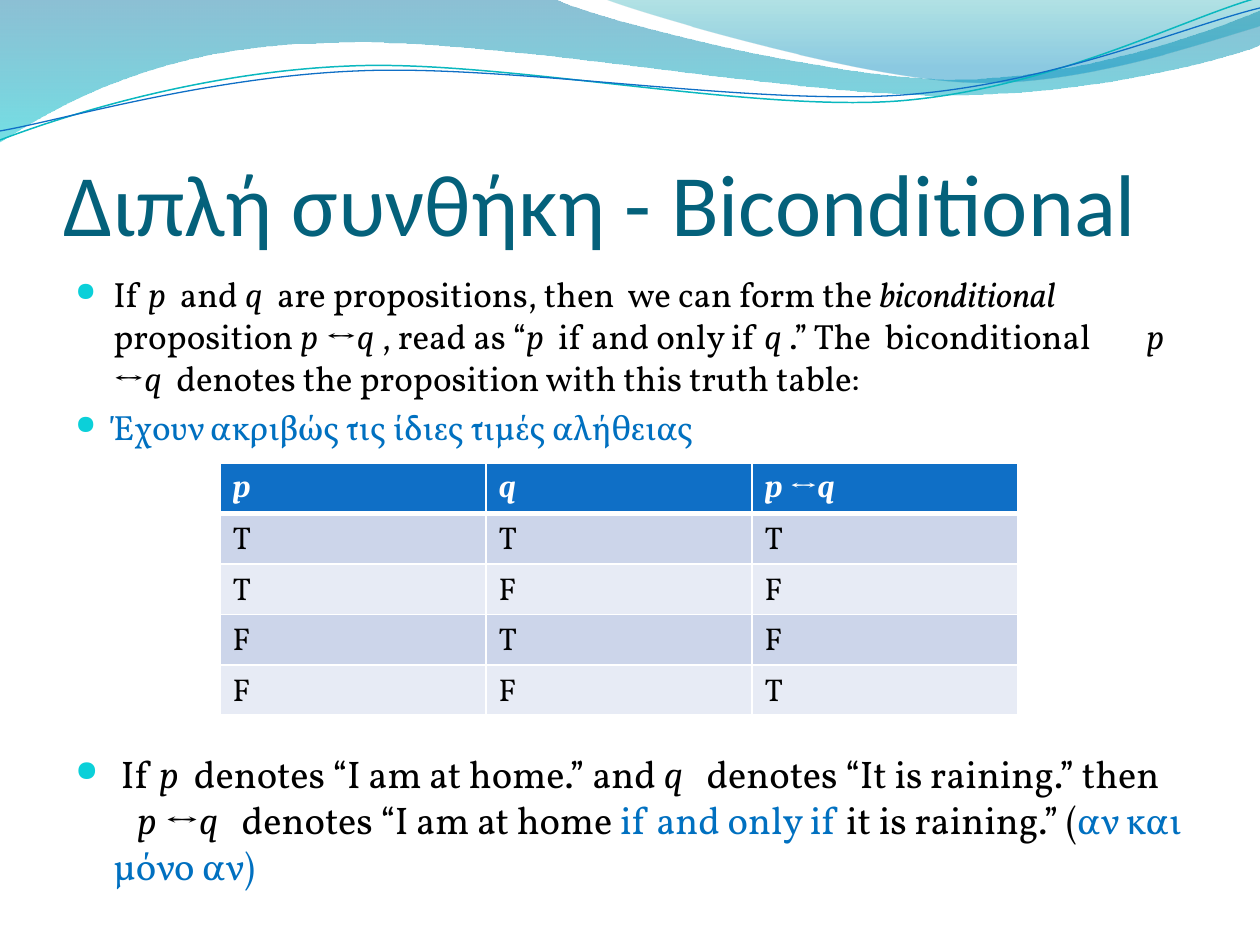
from lxml import etree
from pptx import Presentation
from pptx.dml.color import RGBColor
from pptx.enum.text import MSO_ANCHOR, MSO_AUTO_SIZE, PP_ALIGN
from pptx.oxml.ns import qn
from pptx.util import Pt

PX = 914400 / 126
LEFT, BOTTOM, NO_FIT = PP_ALIGN.LEFT, MSO_ANCHOR.BOTTOM, MSO_AUTO_SIZE.NONE
COLOURS = {
    "title": "04617B", "text": "000000", "accent": "0070C0", "bullet": "0BD0D9",
    "header": "0F6FC6", "white": "FFFFFF", "odd": "CCD5EA", "even": "E7EBF5",
    "wave_blue": "0074A1", "wave_cyan": "00C6CF", "crest_teal": "00A1A9",
    "crest_blue": "008BBF", "line_teal": "0AB8BF", "line_blue": "0F6FC6",
}
STYLES = {
    "plain": {},
    "key": {"colour": "accent"},
    "term": {"italic": True},
    "math": {"font": "Cambria", "italic": True},
    "arrow": {"font": "Cambria"},
}


def add_span(para, text, font="Vollkorn", size=20, colour="text", bold=False, italic=False):
    span = para.add_run()
    span.text = text
    span.font.name, span.font.size = font, Pt(size)
    span.font.bold, span.font.italic = bold, italic
    span.font.color.rgb = RGBColor.from_string(COLOURS[colour])


def add_curve(page, start, pieces, closed):
    """Draw line ends (2 numbers) and Bézier pieces (6 numbers), given in px."""
    ends = [piece[-2:] for piece in pieces]
    builder = page.shapes.build_freeform(*start, scale=PX)
    builder.add_line_segments(ends, close=closed)
    shape = builder.convert_to_shape()
    shape.shadow.inherit = False
    left = min(x for x, _ in [start, *ends])
    top = min(y for _, y in [start, *ends])
    for node, piece in zip(list(shape._element.iter(qn("a:lnTo"))), pieces):
        if len(piece) == 6:
            node.addprevious(bezier := etree.Element(qn("a:cubicBezTo")))
            for x, y in zip(piece[::2], piece[1::2]):
                etree.SubElement(bezier, qn("a:pt"), x=str(x - left), y=str(y - top))
            node.getparent().remove(node)
    return shape


deck = Presentation()
deck.slide_width, deck.slide_height = round(1260 * PX), round(945 * PX)
page = deck.slides.add_slide(deck.slide_layouts[5])

# Wave bands at the top: start, pieces, stops of (position, colour, opacity in %)
bands = [
    ((0, 0), [(554, -1), (600, 21, 837, 79, 955, 79), (1075, 79, 1207, 33, 1260, 11),
              (1261, 45), (1239, 55, 1096, 96, 940, 95), (784, 95, 481, 35, 324, 43),
              (163, 45, 58, 105, -1, 142)],
     [(0, "wave_blue", 45), (1, "wave_cyan", 55)]),
    ((604, -1), [(641, 14, 859, 78, 969, 82), (1079, 87, 1211, 40, 1260, 26), (1260, 0)],
     [(0, "crest_teal", 30), (0.8, "crest_blue", 45)]),
]
for start, pieces, stops in bands:
    band = add_curve(page, start, pieces, True)
    band.line.fill.background()
    band.fill.gradient()
    band.fill.gradient_angle = 270
    for stop, (position, colour, _) in zip(band.fill.gradient_stops, stops):
        stop.position = position
        stop.color.rgb = RGBColor.from_string(COLOURS[colour])
    colour_nodes = band._element.spPr.iter(qn("a:srgbClr"))
    for node, (_, _, opacity) in zip(colour_nodes, stops):
        etree.SubElement(node, qn("a:alpha"), val=str(opacity * 1000))

wave_lines = [
    ((0, 140), [(60, 117, 199, 72, 349, 66), (498, 59, 747, 112, 898, 101),
                (1050, 89, 1182, 19, 1257, -2)], "line_teal", 0.85),
    ((0, 131), [(59, 121, 207, 77, 357, 71), (508, 64, 752, 106, 903, 95),
                (1053, 84, 1186, 26, 1260, 8)], "line_blue", 0.75),
]
for start, pieces, colour, width in wave_lines:
    wave = add_curve(page, start, pieces, False)
    wave.fill.background()
    wave.line.color.rgb = RGBColor.from_string(COLOURS[colour])
    wave.line.width = Pt(width)

# Title
title = page.shapes.title
title.left, title.top, title.width, title.height = [round(n * PX) for n in (63, 97, 1134, 157)]
frame = title.text_frame
frame.auto_size, frame.vertical_anchor, frame.word_wrap = NO_FIT, BOTTOM, True
frame.margin_left = frame.margin_right = frame.margin_bottom = 0
frame.paragraphs[0].alignment = LEFT
add_span(frame.paragraphs[0], "Διπλή συνθήκη - Biconditional", font="Calibri", size=50, colour="title")

# Bulleted text: size, space before, tab stop, spans; the last leaves room for the table
equivalence = [("p ", "math"), ("↔", "arrow"), ("q", "math")]
bullets = [
    (20, 4, 1085, [
        ("If ", "plain"), ("p", "math"), ("  and ", "plain"), ("q", "math"),
        ("  are propositions, then  we can form the ", "plain"),
        ("biconditional ", "term"), ("proposition ", "plain"), *equivalence,
        (" , read as “", "plain"), ("p", "math"), ("  if and only if ", "plain"),
        ("q", "math"), (" .” The  biconditional\t", "plain"), *equivalence,
        ("  denotes the proposition with this truth table:", "plain")]),
    (20, 4, None, [("Έχουν ακριβώς τις ίδιες τιμές αλήθειας", "key")]),
    (22, 173, 62, [
        (" If ", "plain"), ("p", "math"), ("  denotes “I am at home.” and ", "plain"),
        ("q", "math"), ("   denotes “It is raining.” then", "plain"), ("\n", "break"),
        ("\t", "plain"), *equivalence, ("   denotes “I am at home ", "plain"),
        ("if and only if ", "key"), ("it is raining.” (", "plain"),
        ("αν και μόνο αν)", "key")]),
]
box = page.shapes.add_textbox(*[round(n * PX) for n in (63, 266, 1134, 605)])
frame = box.text_frame
frame.word_wrap = True
for index, (size, space, tab_stop, spans) in enumerate(bullets):
    para = frame.add_paragraph() if index else frame.paragraphs[0]
    para.space_before = Pt(space)
    for text, style in spans:
        if style == "break":
            para.add_line_break()
        else:
            add_span(para, text, size=size, **STYLES[style])
    props = para._p.get_or_add_pPr()
    props.set("marL", str(round(38 * PX)))
    props.set("indent", str(round(-38 * PX)))
    bullet_colour = etree.SubElement(props, qn("a:buClr"))
    etree.SubElement(bullet_colour, qn("a:srgbClr"), val=COLOURS["bullet"])
    etree.SubElement(props, qn("a:buSzPct"), val="75000")
    etree.SubElement(props, qn("a:buChar"), char="●")
    if tab_stop:
        tabs = etree.SubElement(props, qn("a:tabLst"))
        etree.SubElement(tabs, qn("a:tab"), pos=str(round(tab_stop * PX)), algn="l")

# Truth table
headings = [[("p", "math")], [("q", "math")], equivalence]
rows = [headings] + [[[(value, "plain")] for value in values] for values in ("TTT", "TFF", "FTF", "FFT")]
table_frame = page.shapes.add_table(5, 3, *[round(n * PX) for n in (220, 463, 798, 210)])
for row, cells in enumerate(rows):
    fill = "header" if row == 0 else "odd" if row % 2 else "even"
    borders = {"lnL": 1, "lnR": 1, "lnT": 3 if row == 1 else 1, "lnB": 3 if row == 0 else 1}
    for column, spans in enumerate(cells):
        cell = table_frame.table.cell(row, column)
        props = cell._tc.get_or_add_tcPr()
        for side, width in borders.items():
            border = etree.SubElement(props, qn(f"a:{side}"), w=str(Pt(width)))
            border_fill = etree.SubElement(border, qn("a:solidFill"))
            etree.SubElement(border_fill, qn("a:srgbClr"), val=COLOURS["white"])
        cell.fill.solid()
        cell.fill.fore_color.rgb = RGBColor.from_string(COLOURS[fill])
        for text, style in spans:
            add_span(cell.text_frame.paragraphs[0], text, size=18, bold=row == 0,
                     colour="text" if row else "white", **STYLES[style])
table_frame.height = round(252 * PX)

deck.save("out.pptx")
